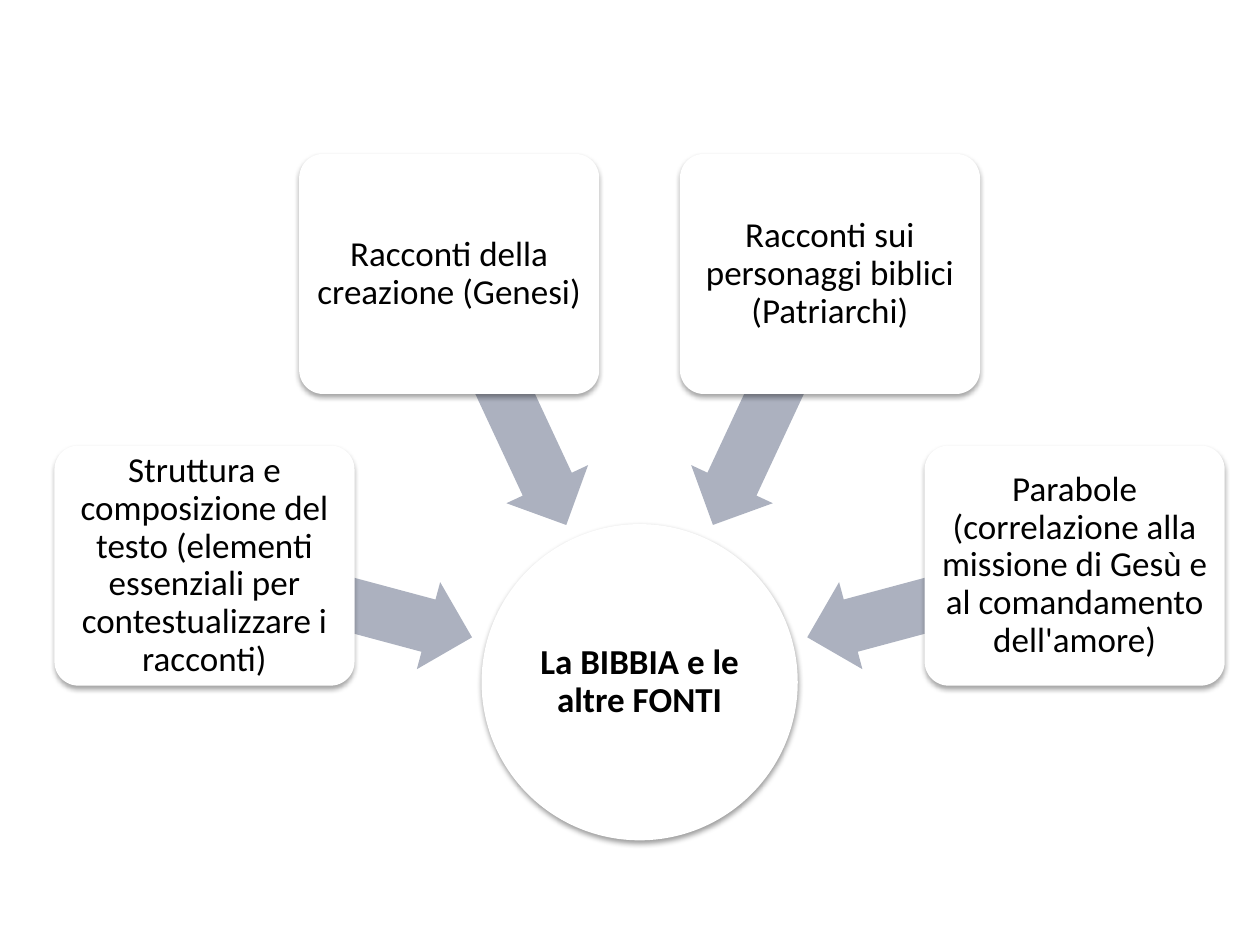
import math

import pptx
import pptx.dml.color
import pptx.enum.shapes
import pptx.enum.text
import pptx.oxml
import pptx.oxml.ns
import pptx.util

Pt = pptx.util.Pt
RGBColor = pptx.dml.color.RGBColor
MSO_SHAPE = pptx.enum.shapes.MSO_SHAPE

WHITE = RGBColor(0xFF, 0xFF, 0xFF)
BLACK = RGBColor(0x00, 0x00, 0x00)
ARROW_GREY = RGBColor(0xAC, 0xB1, 0xBF)

HUB_TEXT = "La BIBBIA e le altre FONTI"
TOPICS = [
    "Struttura e composizione del testo (elementi essenziali per contestualizzare i racconti)",
    "Racconti della creazione (Genesi)",
    "Racconti sui personaggi biblici (Patriarchi)",
    "Parabole (correlazione alla missione di Gesù e al comandamento dell'amore)",
]

HUB_SIZE = 180.7
TOPIC_WIDTH, TOPIC_HEIGHT = 171.5, 137.2
ARROW_LENGTH, ARROW_THICKNESS = 157.7, 51.5
TOPIC_RADIUS, ARROW_RADIUS = 257.4, 178
FIRST_ANGLE, ANGLE_STEP = 195, 50


def add_centred_shape(slide, preset, centre, width, height, color):
    x, y = centre
    shape = slide.shapes.add_shape(
        preset, Pt(x - width / 2), Pt(y - height / 2), Pt(width), Pt(height))
    shape.fill.solid()
    shape.fill.fore_color.rgb = color
    shape.line.fill.background()
    shape.shadow.inherit = False
    return shape


def add_drop_shadow(shape, distance, opacity):
    """Add a soft black shadow below the shape; opacity is in percent."""
    namespace = pptx.oxml.ns.nsdecls("a")
    effects = shape._element.spPr.find(pptx.oxml.ns.qn("a:effectLst"))
    effects.append(pptx.oxml.parse_xml(
        f'<a:outerShdw {namespace} blurRad="{Pt(3.1)}" dist="{Pt(distance)}" '
        f'dir="5400000" rotWithShape="0"><a:srgbClr val="{BLACK}">'
        f'<a:alpha val="{opacity * 1000}"/></a:srgbClr></a:outerShdw>'))


def write_label(shape, text, inset, bold=False):
    frame = shape.text_frame
    frame.word_wrap = True
    frame.vertical_anchor = pptx.enum.text.MSO_ANCHOR.MIDDLE
    frame.margin_left = frame.margin_right = Pt(inset)
    frame.margin_top = frame.margin_bottom = Pt(inset)
    paragraph = frame.paragraphs[0]
    paragraph.text = text
    paragraph.alignment = pptx.enum.text.PP_ALIGN.CENTER
    paragraph.line_spacing = 0.9
    paragraph.font.name = "Calibri"
    paragraph.font.size = Pt(20)
    paragraph.font.bold = bold
    paragraph.font.color.rgb = BLACK


def add_hub(slide, centre):
    hub = add_centred_shape(slide, MSO_SHAPE.OVAL, centre, HUB_SIZE, HUB_SIZE, WHITE)
    add_drop_shadow(hub, 1.6, 38)
    write_label(hub, HUB_TEXT, 0.9, bold=True)


def add_topic(slide, hub_centre, angle, text):
    """Add an arrow to the hub and, over its tail, the topic box."""
    def point_at(radius):
        turn = math.radians(angle)
        return (hub_centre[0] + radius * math.cos(turn),
                hub_centre[1] + radius * math.sin(turn))

    arrow = add_centred_shape(slide, MSO_SHAPE.LEFT_ARROW, point_at(ARROW_RADIUS),
                              ARROW_LENGTH, ARROW_THICKNESS, ARROW_GREY)
    arrow.adjustments[0] = 0.6
    arrow.adjustments[1] = 0.5
    arrow.rotation = angle

    box = add_centred_shape(slide, MSO_SHAPE.ROUNDED_RECTANGLE, point_at(TOPIC_RADIUS),
                            TOPIC_WIDTH, TOPIC_HEIGHT, WHITE)
    box.adjustments[0] = 0.1
    add_drop_shadow(box, 1.8, 35)
    write_label(box, text, 3)


def add_radial_diagram(slide, left, top, width, height):
    """Fan the topics out above a hub resting on the bottom of the box."""
    hub_centre = (left + width / 2, top + height - HUB_SIZE / 2)
    add_hub(slide, hub_centre)
    for index, topic in enumerate(TOPICS):
        add_topic(slide, hub_centre, FIRST_ANGLE + index * ANGLE_STEP, topic)


def main():
    presentation = pptx.Presentation()
    presentation.slide_width, presentation.slide_height = Pt(720), Pt(540)
    slide = presentation.slides.add_slide(presentation.slide_layouts[6])
    add_radial_diagram(slide, left=31, top=88, width=669, height=392.2)
    presentation.save("out.pptx")


if __name__ == "__main__":
    main()
